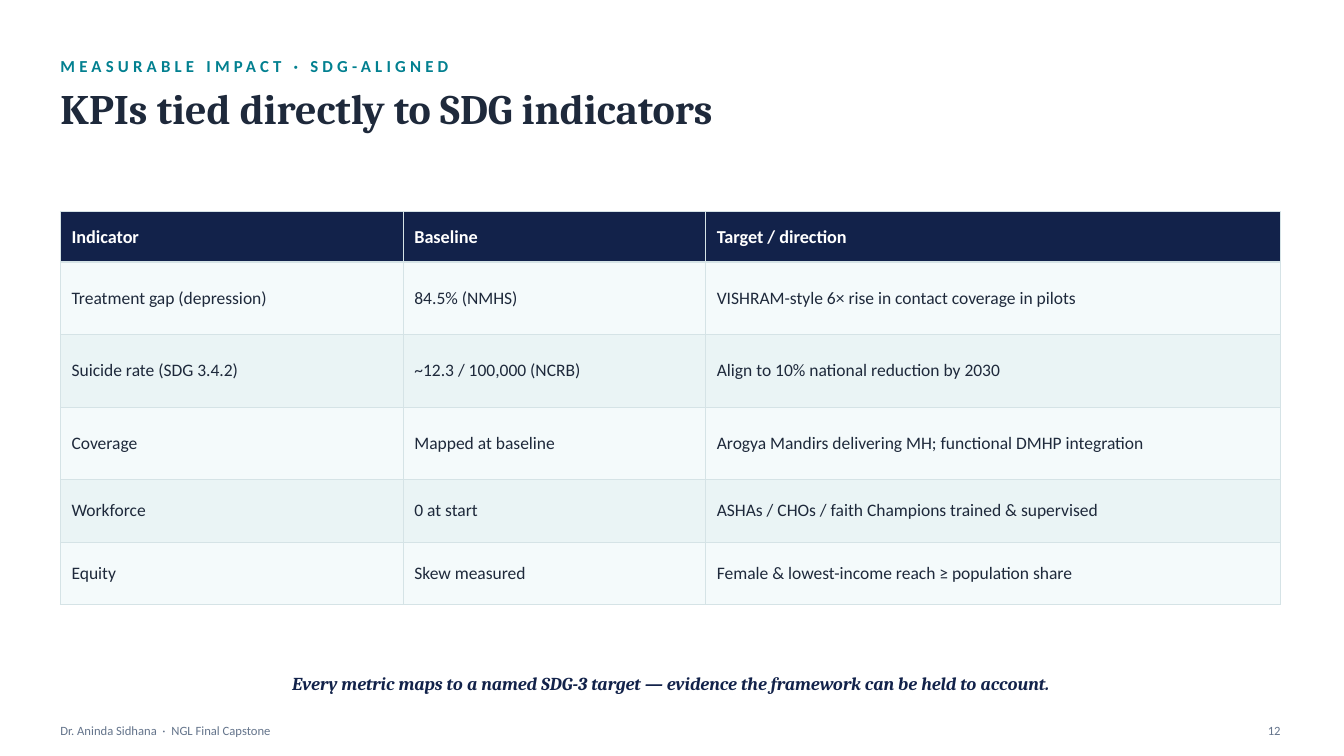
import pptx
import pptx.dml.color
import pptx.enum.text
import pptx.oxml
import pptx.oxml.ns
import pptx.util
from lxml import etree

Inches, Pt = pptx.util.Inches, pptx.util.Pt
ALIGN, ANCHOR = pptx.enum.text.PP_ALIGN, pptx.enum.text.MSO_ANCHOR
SANS, SERIF = "Calibri", "Cambria"
NAVY, INK, TEAL, GREY = "12224A", "1E293B", "028090", "64748B"
BORDER, BANDS = "D5E3E6", ("F4FAFB", "EAF4F5")

WIDTH, HEIGHT = 13.33, 7.5
MARGIN, CONTENT_W = 0.6, 12.1
INSET = 0.1

COLUMNS = (3.4, 3, 5.7)
ROWS = (0.5, 0.72, 0.72, 0.72, 0.62, 0.62)
KPIS = (
    ("Indicator", "Baseline", "Target / direction"),
    ("Treatment gap (depression)", "84.5% (NMHS)",
     "VISHRAM-style 6× rise in contact coverage in pilots"),
    ("Suicide rate (SDG 3.4.2)", "~12.3 / 100,000 (NCRB)",
     "Align to 10% national reduction by 2030"),
    ("Coverage", "Mapped at baseline",
     "Arogya Mandirs delivering MH; functional DMHP integration"),
    ("Workforce", "0 at start",
     "ASHAs / CHOs / faith Champions trained & supervised"),
    ("Equity", "Skew measured",
     "Female & lowest-income reach ≥ population share"),
)


def rgb(value):
    return pptx.dml.color.RGBColor.from_string(value)


def write(tf, text, size, color, font=SANS, bold=False, italic=False,
          align=ALIGN.LEFT):
    """Put one styled paragraph in a text frame."""
    p = tf.paragraphs[0]
    p.text = text
    p.alignment = align
    p.font.name, p.font.size = font, Pt(size)
    p.font.bold, p.font.italic = bold, italic
    p.font.color.rgb = rgb(color)
    return p


def set_frame(tf, anchor, inset):
    tf.word_wrap = True
    tf.auto_size = pptx.enum.text.MSO_AUTO_SIZE.NONE
    tf.vertical_anchor = anchor
    tf.margin_left = tf.margin_right = Inches(inset)
    tf.margin_top = tf.margin_bottom = Inches(inset / 2)


def add_text(slide, box, text, size, color, inset=INSET, **style):
    sp = slide.shapes.add_textbox(*map(Inches, box))
    set_frame(sp.text_frame, ANCHOR.MIDDLE, inset)
    return write(sp.text_frame, text, size, color, **style)


def add_heading(slide, left, top, width):
    # Spaced kicker above the title
    p = add_text(slide, (left, top, 9, 0.3), "MEASURABLE IMPACT · SDG-ALIGNED",
                 12, TEAL, inset=0, bold=True)
    p.runs[0].font._element.set("spc", "300")
    # Title
    title = slide.shapes.title
    title.left, title.top = Inches(left), Inches(top + 0.32)
    title.width, title.height = Inches(width), Inches(0.95)
    set_frame(title.text_frame, ANCHOR.TOP, 0)
    write(title.text_frame, "KPIs tied directly to SDG indicators", 30, INK,
          font=SERIF, bold=True)


def set_borders(cell, color, width):
    tc_pr = cell._tc.get_or_add_tcPr()
    qn = pptx.oxml.ns.qn
    for side in ("a:lnL", "a:lnR", "a:lnT", "a:lnB"):
        ln = etree.SubElement(tc_pr, qn(side), w=str(Pt(width)))
        fill = etree.SubElement(ln, qn("a:solidFill"))
        etree.SubElement(fill, qn("a:srgbClr"), val=color)


def add_kpi_table(slide, left, top):
    box = (left, top, sum(COLUMNS), sum(ROWS))
    table = slide.shapes.add_table(len(ROWS), len(COLUMNS),
                                   *map(Inches, box)).table
    for column, width in zip(table.columns, COLUMNS):
        column.width = Inches(width)
    for i, (row, height, texts) in enumerate(zip(table.rows, ROWS, KPIS)):
        row.height = Inches(height)
        header = i == 0
        for cell, text in zip(row.cells, texts):
            set_borders(cell, BORDER, 1)
            cell.fill.solid()
            cell.fill.fore_color.rgb = rgb(NAVY if header else BANDS[(i - 1) % 2])
            cell.vertical_anchor = ANCHOR.MIDDLE
            cell.margin_left = cell.margin_right = Inches(0.11)
            cell.margin_top = cell.margin_bottom = Inches(0.06)
            write(cell.text_frame, text, 13 if header else 12.5,
                  "FFFFFF" if header else INK, bold=header)


def add_footer(slide, left, top, right):
    add_text(slide, (left, top, 8, 0.3),
             "Dr. Aninda Sidhana  ·  NGL Final Capstone", 9, GREY)
    add_text(slide, (right - 0.4, top, 0.4, 0.3), "12", 9, GREY,
             align=ALIGN.RIGHT)


def main():
    prs = pptx.Presentation()
    prs.slide_width, prs.slide_height = Inches(WIDTH), Inches(HEIGHT)
    slide = prs.slides.add_slide(prs.slide_layouts.get_by_name("Title Only"))

    add_heading(slide, MARGIN, 0.5, CONTENT_W)
    add_kpi_table(slide, MARGIN, 2.1)
    # Closing statement
    add_text(slide, (MARGIN, 6.6, CONTENT_W, 0.35),
             "Every metric maps to a named SDG-3 target — evidence the "
             "framework can be held to account.",
             13, NAVY, font=SERIF, bold=True, italic=True, align=ALIGN.CENTER)
    # Footer text lines up with the margins once its inset is counted
    add_footer(slide, MARGIN - INSET, 7.1, MARGIN + CONTENT_W + INSET)

    prs.save("out.pptx")


if __name__ == "__main__":
    main()
